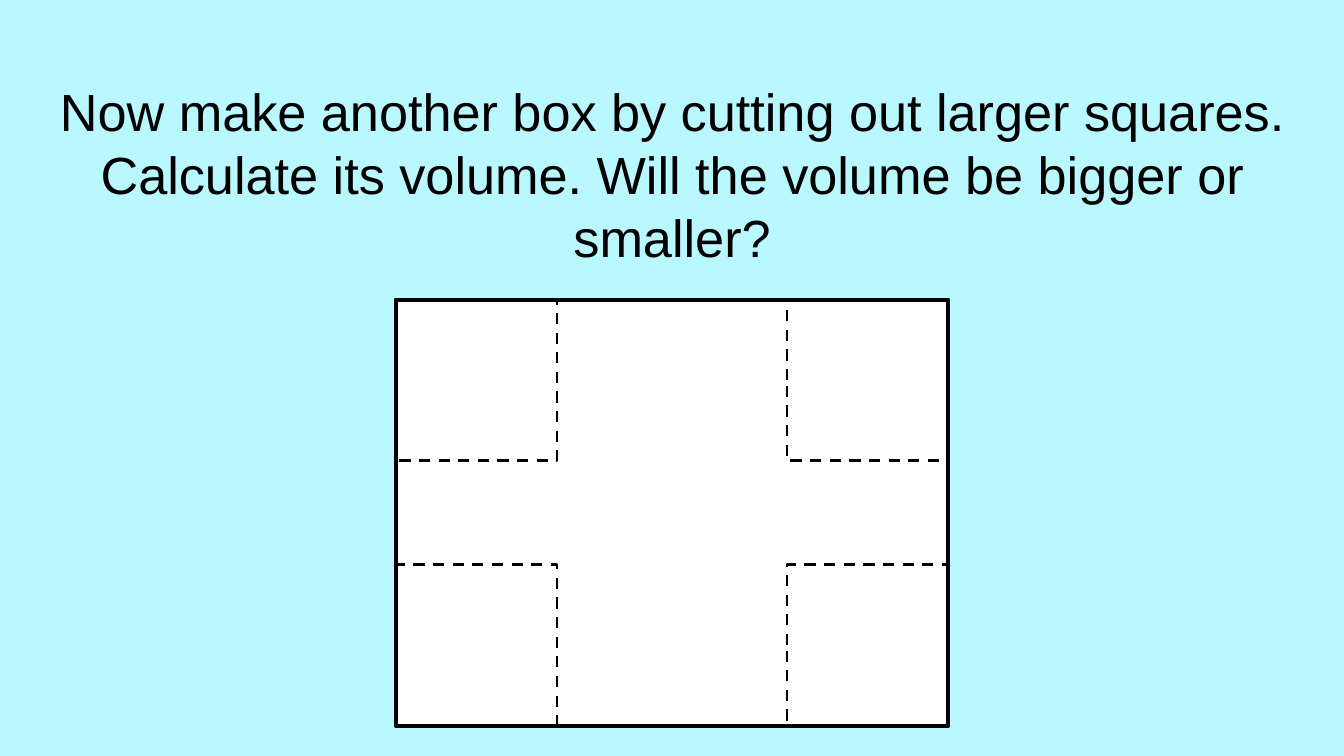
from itertools import product

from pptx import Presentation
from pptx.dml.color import RGBColor
from pptx.enum.dml import MSO_LINE
from pptx.enum.shapes import MSO_SHAPE
from pptx.enum.text import MSO_ANCHOR, PP_ALIGN
from pptx.util import Inches, Pt

W = 10
H = W * 9 / 16
SHEET_W, SHEET_H = 4.11, 3.17
SHEET_X, SHEET_Y = (W - SHEET_W) / 2, 2.23
CUT = 0.12 * W


def color(value):
    return RGBColor.from_string(value)


def add_text(s, text, x, y, w, h, size=28, font="Arial", fill="000000",
             align=PP_ALIGN.CENTER):
    sp = s.shapes.add_textbox(Inches(x), Inches(y), Inches(w), Inches(h))
    tf = sp.text_frame
    tf.word_wrap = True
    tf.vertical_anchor = MSO_ANCHOR.TOP
    tf.margin_left = tf.margin_right = Inches(0.1)
    tf.margin_top = tf.margin_bottom = Inches(0.1)
    p = tf.paragraphs[0]
    p.alignment = align
    r = p.add_run()
    r.text = text
    r.font.size = Pt(size)
    r.font.name = font
    r.font.color.rgb = color(fill)


def add_turned_rect(shapes, x, y, w, h, weight, fill=None, dash=None):
    """Add a rectangle turned by 90 degrees that covers the box x, y, w, h."""
    left, top = x + (w - h) / 2, y + (h - w) / 2
    sp = shapes.add_shape(MSO_SHAPE.RECTANGLE, Inches(left), Inches(top),
                          Inches(h), Inches(w))
    sp.rotation = 90
    sp.shadow.inherit = False
    if fill:
        sp.fill.solid()
        sp.fill.fore_color.rgb = color(fill)
    else:
        sp.fill.background()
    sp.line.color.rgb = color("000000")
    sp.line.width = Pt(weight)
    if dash:
        sp.line.dash_style = dash


def add_box_net(s):
    """Draw the sheet with a square to cut out at each corner."""
    shapes = s.shapes.add_group_shape().shapes
    add_turned_rect(shapes, SHEET_X, SHEET_Y, SHEET_W, SHEET_H, 2.25,
                    fill="FFFFFF")
    for col, row in product((1, 0), (1, 0)):
        add_turned_rect(shapes, SHEET_X + col * (SHEET_W - CUT),
                        SHEET_Y + row * (SHEET_H - CUT), CUT, CUT, 1.5,
                        dash=MSO_LINE.DASH)


def main():
    prs = Presentation()
    prs.slide_width, prs.slide_height = Inches(W), Inches(H)
    s = prs.slides.add_slide(prs.slide_layouts[6])
    s.background.fill.solid()
    s.background.fill.fore_color.rgb = color("BAF8FF")
    add_text(s, "Now make another box by cutting out larger squares. "
             "Calculate its volume. Will the volume be bigger or smaller?",
             0.34, 0.49, 9.32, 0.63)
    add_box_net(s)
    prs.save("out.pptx")


if __name__ == "__main__":
    main()
